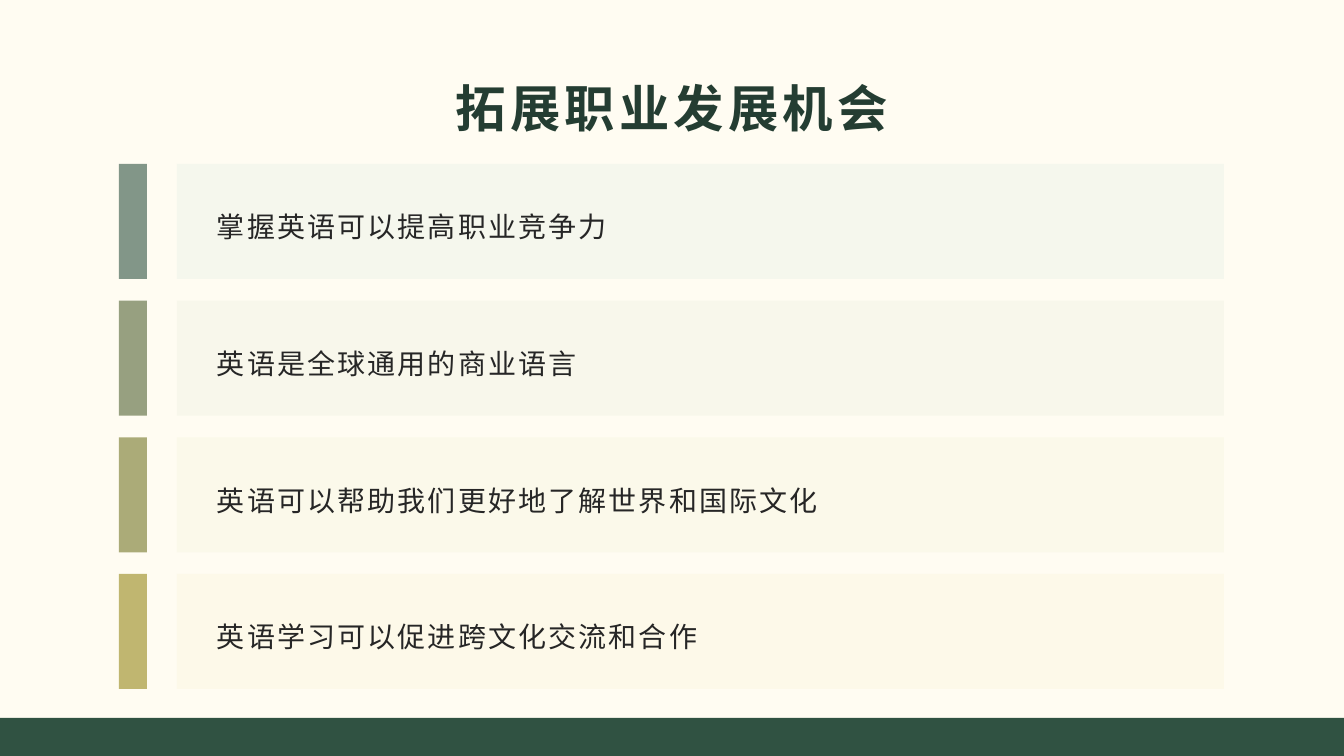
from pptx import Presentation
from pptx.dml.color import RGBColor
from pptx.enum.shapes import MSO_SHAPE as Shape
from pptx.enum.text import MSO_ANCHOR as Anchor, PP_ALIGN as Align
from pptx.oxml.ns import qn
from pptx.util import Pt
from lxml.etree import SubElement

PX = 914400 / 100.8
FONT = "Noto Sans CJK SC"
ROWS = [
    ("掌握英语可以提高职业竞争力", "305242", "CFE3DA"),
    ("英语是全球通用的商业语言", "526435", "DEE6D0"),
    ("英语可以帮助我们更好地了解世界和国际文化", "747628", "ECEDCA"),
    ("英语学习可以促进跨文化交流和合作", "97881A", "F5F0C6"),
]


def px(n):
    """Turn px into EMU."""
    return round(n * PX)


def paint(fill, color, alpha=100):
    """Fill with a solid hex colour at the given opacity in percent."""
    fill.solid()
    fill.fore_color.rgb = RGBColor.from_string(color)
    if alpha < 100:
        tint = fill._xPr.find(qn("a:solidFill"))[0]
        SubElement(tint, qn("a:alpha")).set("val", str(alpha * 1000))


def block(slide, box, color, alpha=100):
    """Draw a plain rectangle."""
    rect = slide.shapes.add_shape(Shape.RECTANGLE, *map(px, box))
    rect.shadow.inherit = False
    rect.line.fill.background()
    paint(rect.fill, color, alpha)


def label(slide, box, text, size, color, gap, bold=False):
    """Place one line of spaced text, centred in height, and return its paragraph."""
    frame = slide.shapes.add_textbox(*map(px, box)).text_frame
    frame.word_wrap = True
    frame.vertical_anchor = Anchor.MIDDLE
    frame.text = text
    para = frame.paragraphs[0]
    font = para.runs[0].font
    font.size, font.bold, font.name = Pt(size), bold, FONT
    paint(font.fill, color)
    font._element.set("spc", str(round(gap * 100)))
    SubElement(font._element, qn("a:ea")).set("typeface", FONT)
    return para


def title(slide, box):
    """Set the centred heading."""
    para = label(slide, box, "拓展职业发展机会", 36, "243D32", 3, True)
    para.alignment = Align.CENTER


def row(slide, box, text, dark, pale):
    """Draw a marker bar and a pale panel with its text."""
    x, y, w, h = box
    block(slide, (x + 58, y, w - 58, h), pale, 20)
    block(slide, (x, y, 28, h), dark, 60)
    para = label(slide, (x + 88, y + 10, w - 103, h - 20), text, 20, "262626", 1.5)
    para.line_spacing = 1.3


def stack(slide, box, high):
    """Spread the rows evenly over the box."""
    x, y, w, h = box
    step = (h - high) / (len(ROWS) - 1)
    for i, item in enumerate(ROWS):
        row(slide, (x, y + i * step, w, high), *item)


def main():
    """Build and save the slide."""
    deck = Presentation()
    deck.slide_width, deck.slide_height = px(1344), px(756)
    slide = deck.slides.add_slide(deck.slide_layouts[6])
    paint(slide.background.fill, "FFFCF2")
    block(slide, (0, 718, 1344, 38), "305242")
    title(slide, (67, 68, 1210, 78))
    stack(slide, (119, 164, 1105, 525), 115)
    deck.save("out.pptx")


if __name__ == "__main__":
    main()
